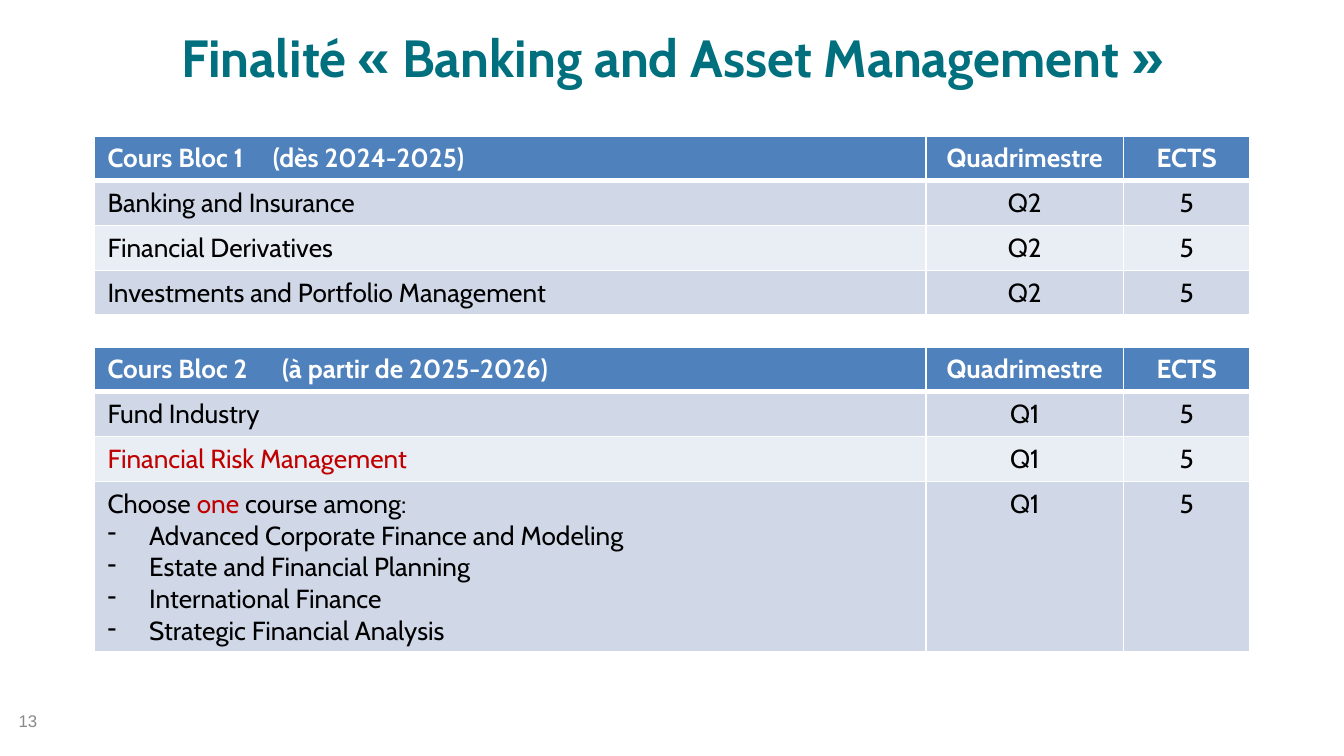
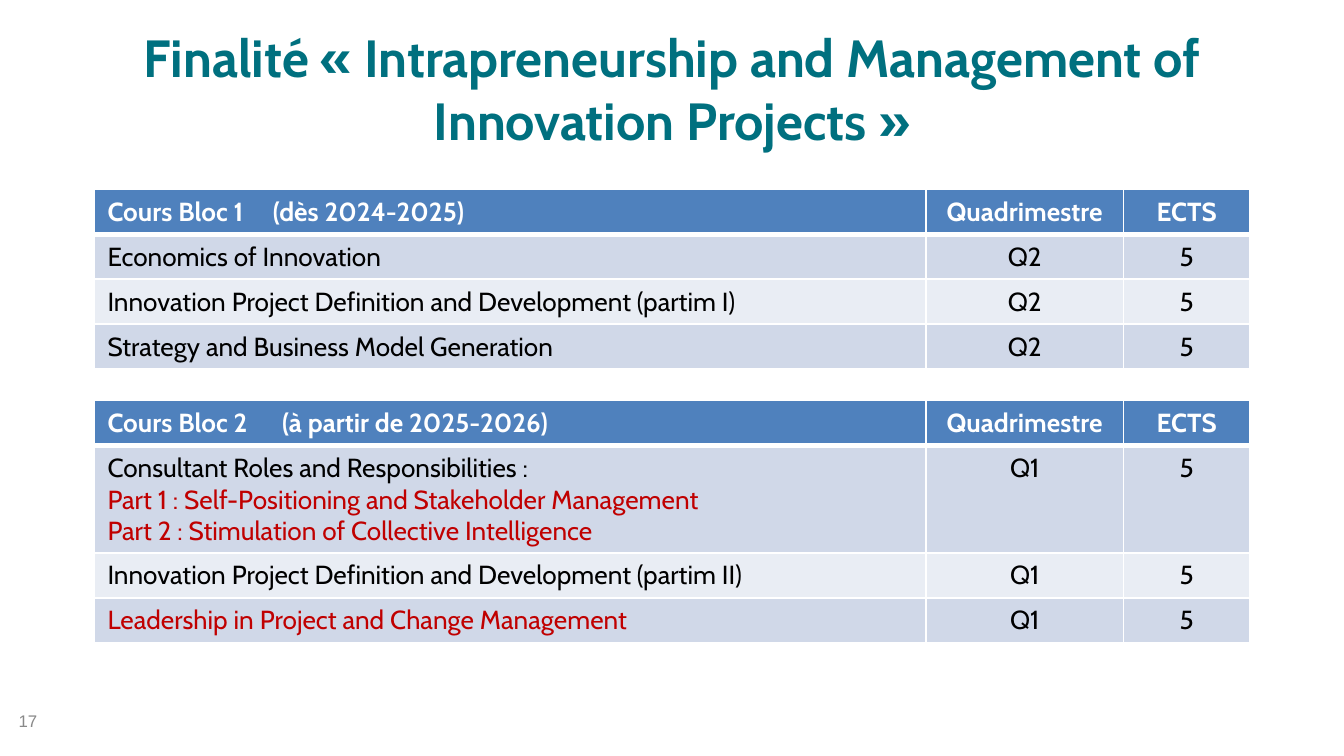
from lxml import etree
from pptx import Presentation
from pptx.dml.color import RGBColor
from pptx.enum.text import MSO_ANCHOR, PP_ALIGN
from pptx.oxml.ns import qn
from pptx.util import Inches, Pt

LEFT, CENTER = PP_ALIGN.LEFT, PP_ALIGN.CENTER
TOP, MIDDLE = MSO_ANCHOR.TOP, MSO_ANCHOR.MIDDLE
TITLE_ONLY = 5

TEAL, BLUE, RED, GREY = "00707F", "4F81BD", "C00000", "898989"
BLACK, WHITE = "000000", "FFFFFF"
BANDS = ("D0D8E8", "E9EDF4")
COLUMN_WIDTHS = (6.19, 1.47, 0.94)
ROW_HEIGHTS = (0.24, 0.24, 0.28, 0.28)
DRAWN_ROW, DRAWN_LINE = 0.33, 0.24
BLOCK_PITCH = 1.57
HANGING = 0.31

BLOCKS = (
    ("Cours Bloc 1\t(dès 2024-2025)", 1.23, "Q2"),
    ("Cours Bloc 2\t(à partir de 2025-2026)", 1.3, "Q1"),
)

SLIDES = (
    {
        "title": "Finalité « Banking and Asset Management »",
        "number": 13,
        "top": 1.01,
        "courses": (
            ("Banking and Insurance", "Financial Derivatives",
             "Investments and Portfolio Management"),
            ("Fund Industry", "*Financial Risk Management*",
             "Choose *one* course among:\n"
             "- Advanced Corporate Finance and Modeling\n"
             "- Estate and Financial Planning\n"
             "- International Finance\n"
             "- Strategic Financial Analysis"),
        ),
    },
    {
        "title": "Finalité « Intrapreneurship and Management of Innovation Projects »",
        "number": 17,
        "top": 1.41,
        "courses": (
            ("Economics of Innovation",
             "Innovation Project Definition and Development (partim I)",
             "Strategy and Business Model Generation"),
            ("Consultant Roles and Responsibilities :\n"
             "*Part 1 : Self-Positioning and Stakeholder Management*\n"
             "*Part 2 : Stimulation of Collective Intelligence*",
             "Innovation Project Definition and Development (partim II)",
             "*Leadership in Project and Change Management*"),
        ),
    },
)


def color(value):
    """Turn a hex string into a colour."""
    return RGBColor.from_string(value)


def add_hanging_dash(paragraph):
    """Give a paragraph a dash bullet with a hanging indent."""
    properties = paragraph._p.get_or_add_pPr()
    properties.set("marL", str(Inches(HANGING)))
    properties.set("indent", str(-Inches(HANGING)))
    etree.SubElement(properties, qn("a:buFontTx"))
    etree.SubElement(properties, qn("a:buChar"), char="-")


def add_tab_stop(paragraph, position):
    """Set a left tab stop, in inches from the text edge."""
    properties = paragraph._p.get_or_add_pPr()
    tabs = etree.SubElement(properties, qn("a:tabLst"))
    etree.SubElement(tabs, qn("a:tab"), pos=str(Inches(position)), algn="l")


def write_text(frame, text, size=14, font="Cabin", ink=BLACK, bold=False,
               align=LEFT, tab=None):
    """Write lines of text: a leading dash is a bullet, starred words are red."""
    for index, line in enumerate(text.split("\n")):
        paragraph = frame.add_paragraph() if index else frame.paragraphs[0]
        paragraph.alignment = align
        if line.startswith("- "):
            add_hanging_dash(paragraph)
            line = line[2:]
        if tab:
            add_tab_stop(paragraph, tab)
        for position, part in enumerate(line.split("*")):
            if part:
                run = paragraph.add_run()
                run.text = part
                run.font.size = Pt(size)
                run.font.name = font
                run.font.bold = bold
                run.font.color.rgb = color(RED if position % 2 else ink)


def set_borders(cell, top=1, bottom=1):
    """Draw white borders around a cell, widths in points."""
    properties = cell._tc.get_or_add_tcPr()
    for side, width in (("L", 1), ("R", 1), ("T", top), ("B", bottom)):
        line = etree.SubElement(properties, qn(f"a:ln{side}"), w=str(Pt(width)))
        fill = etree.SubElement(line, qn("a:solidFill"))
        etree.SubElement(fill, qn("a:srgbClr"), val=WHITE)


class Deck:
    """Hold the presentation, its style and the current slide."""

    def __init__(self):
        """Start an empty presentation."""
        self.presentation = Presentation()
        self.presentation.slide_width = Inches(10)
        self.presentation.slide_height = Inches(10) * 9 // 16
        self.slide = None

    def add_slide(self, title, number):
        """Add a slide with its title and page number."""
        layout = self.presentation.slide_layouts[TITLE_ONLY]
        self.slide = self.presentation.slides.add_slide(layout)
        self.add_page_number(number)
        self.add_title(title)

    def add_title(self, text):
        """Place and fill the title placeholder."""
        shape = self.slide.shapes.title
        shape.left, shape.top = Inches(0.5), Inches(0.14)
        shape.width, shape.height = Inches(9), Inches(0.62)
        shape.text_frame.vertical_anchor = TOP
        write_text(shape.text_frame, text, size=28, ink=TEAL, bold=True, align=CENTER)

    def add_page_number(self, number):
        """Write the page number at the bottom left."""
        shape = self.slide.shapes.add_textbox(
            Inches(0.04), Inches(5.21), Inches(2.33), Inches(0.3))
        shape.text_frame.word_wrap = True
        shape.text_frame.vertical_anchor = MIDDLE
        write_text(shape.text_frame, str(number), size=9, font="Arial", ink=GREY)

    def add_course_table(self, top, heading, tab, term, courses):
        """Add the table of courses of one block."""
        rows = [(heading, "Quadrimestre", "ECTS")]
        rows += [(course, term, "5") for course in courses]
        extra_lines = sum(course.count("\n") for course in courses)
        height = Inches(DRAWN_ROW * len(rows) + DRAWN_LINE * extra_lines)
        shape = self.slide.shapes.add_table(
            len(rows), len(COLUMN_WIDTHS), Inches(0.7), Inches(top),
            Inches(sum(COLUMN_WIDTHS)), height)
        table = shape.table
        for column, width in zip(table.columns, COLUMN_WIDTHS):
            column.width = Inches(width)
        for row, row_height in zip(table.rows, ROW_HEIGHTS):
            row.height = Inches(row_height)
        shape.height = height
        for row_index, row in enumerate(rows):
            is_header = row_index == 0
            for column_index, text in enumerate(row):
                cell = table.cell(row_index, column_index)
                set_borders(cell, top=3 if row_index == 1 else 1,
                            bottom=3 if is_header else 1)
                cell.fill.solid()
                cell.fill.fore_color.rgb = color(
                    BLUE if is_header else BANDS[(row_index - 1) % 2])
                write_text(cell.text_frame, text, bold=is_header,
                           ink=WHITE if is_header else BLACK,
                           align=CENTER if column_index else LEFT,
                           tab=tab if "\t" in text else None)


def main():
    """Build the slides and save them."""
    deck = Deck()
    for content in SLIDES:
        deck.add_slide(content["title"], content["number"])
        for index, (block, courses) in enumerate(zip(BLOCKS, content["courses"])):
            deck.add_course_table(content["top"] + index * BLOCK_PITCH, *block, courses)
    deck.presentation.save("out.pptx")


if __name__ == "__main__":
    main()
